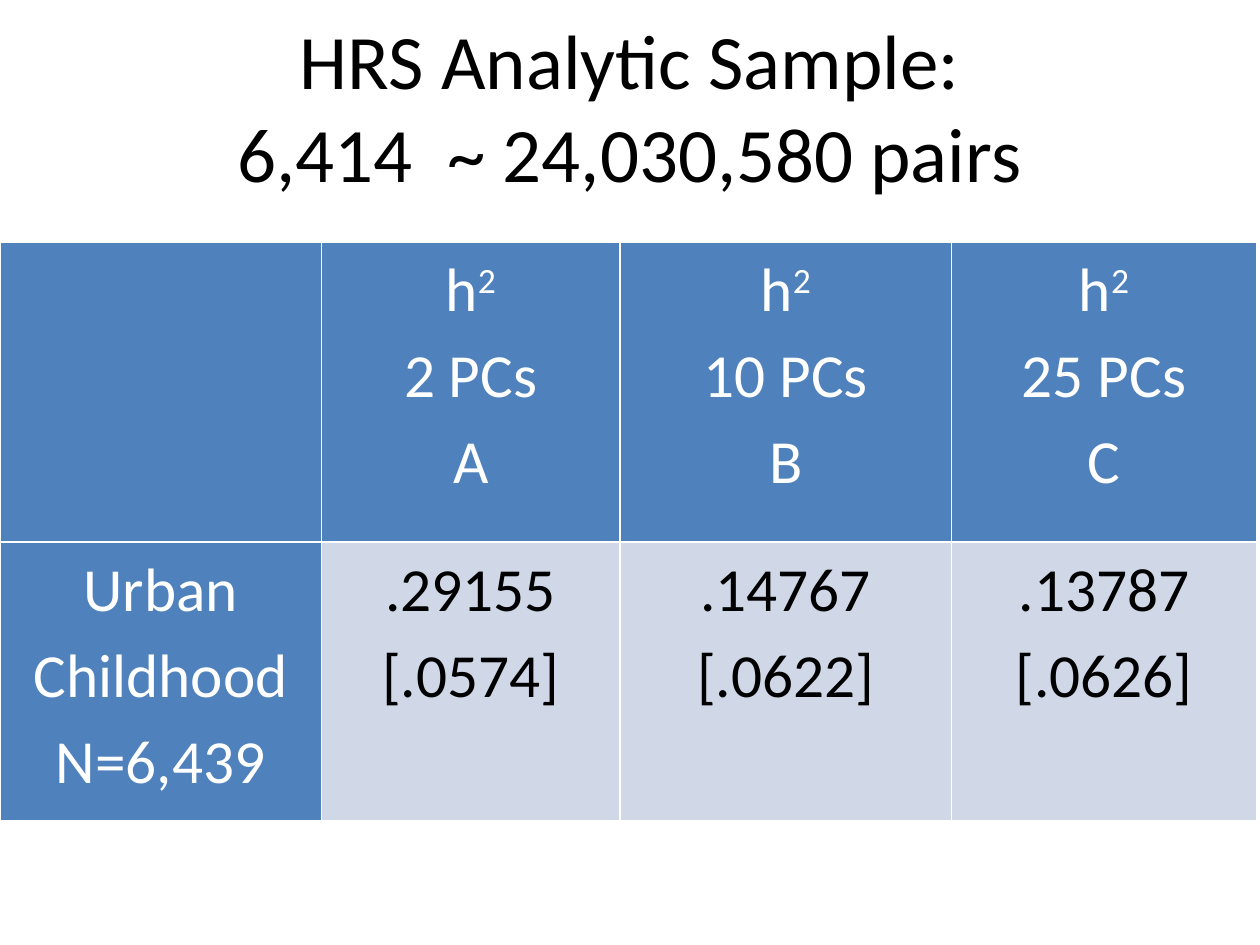
from dataclasses import dataclass

from lxml.etree import SubElement
from pptx import Presentation
from pptx.dml.color import RGBColor
from pptx.enum.text import MSO_ANCHOR as Anchor, PP_ALIGN as Align
from pptx.oxml.ns import qn
from pptx.util import Cm, Pt


@dataclass(frozen=True)
class Theme:
    font: str = "Calibri"
    title_size: int = 44
    cell_size: int = 35
    line_spacing: float = 1.15
    border_width: int = 1
    dark: str = "000000"
    light: str = "FFFFFF"
    header_fill: str = "4F81BD"
    body_fill: str = "D0D8E8"


THEME = Theme()

COLUMN_WIDTHS = (6.48, 6.02, 6.68, 6.15)
ROW_HEIGHTS = (6.05, 5.61)
# Each cell is a list of paragraphs; ^ starts a superscript
MODELS = (("2 PCs", "A"), ("10 PCs", "B"), ("25 PCs", "C"))
ROWS = (
    [[]] + [["h^2", components, letter] for components, letter in MODELS],
    [["Urban Childhood", "N=6,439"], [".29155 [.0574]"], [".14767 [.0622]"],
     [".13787", "[.0626]"]],
)


def write_text(paragraph, text, *, size, color, spacing=1.0):
    paragraph.alignment = Align.CENTER
    paragraph.line_spacing = spacing
    base, _, superscript = text.partition("^")
    for number, line in enumerate(base.split("\n")):
        if number:
            paragraph.add_line_break()
        paragraph.add_run().text = line
    if superscript:
        run = paragraph.add_run()
        run.text = superscript
        run._r.get_or_add_rPr().set("baseline", "30000")
    for run in paragraph.runs:
        run.font.name = THEME.font
        run.font.size = Pt(size)
        run.font.color.rgb = RGBColor.from_string(color)


def set_borders(cell):
    properties = cell._tc.get_or_add_tcPr()
    for position, side in enumerate(("lnL", "lnR", "lnT", "lnB")):
        line = SubElement(properties, qn(f"a:{side}"), w=str(Pt(THEME.border_width)))
        fill = SubElement(line, qn("a:solidFill"))
        SubElement(fill, qn("a:srgbClr"), val=THEME.light)
        # Borders come before the fill in a cell's properties
        properties.insert(position, line)


def add_title(slide, left, top, width, height):
    frame = slide.shapes.add_textbox(Cm(left), Cm(top), Cm(width), Cm(height)).text_frame
    frame.word_wrap = True
    frame.vertical_anchor = Anchor.MIDDLE
    write_text(frame.paragraphs[0], "HRS Analytic Sample:\n6,414  ~ 24,030,580 pairs",
               size=THEME.title_size, color=THEME.dark)


def fill_cell(cell, lines, is_header):
    cell.margin_left = cell.margin_right = Cm(0.23)
    cell.margin_top = cell.margin_bottom = 0
    cell.fill.solid()
    cell.fill.fore_color.rgb = RGBColor.from_string(
        THEME.header_fill if is_header else THEME.body_fill)
    set_borders(cell)
    frame = cell.text_frame
    for number, line in enumerate(lines):
        paragraph = frame.add_paragraph() if number else frame.paragraphs[0]
        write_text(paragraph, line, size=THEME.cell_size,
                   color=THEME.light if is_header else THEME.dark,
                   spacing=THEME.line_spacing)


def add_heritability_table(slide, left, top, width, height):
    table = slide.shapes.add_table(len(ROWS), len(COLUMN_WIDTHS), Cm(left), Cm(top),
                                   Cm(width), Cm(height)).table
    for column, share in zip(table.columns, COLUMN_WIDTHS):
        column.width = Cm(width * share / sum(COLUMN_WIDTHS))
    for row, share in zip(table.rows, ROW_HEIGHTS):
        row.height = Cm(height * share / sum(ROW_HEIGHTS))
    for row_number, row in enumerate(ROWS):
        for column_number, lines in enumerate(row):
            fill_cell(table.cell(row_number, column_number), lines,
                      is_header=row_number == 0 or column_number == 0)


def main():
    presentation = Presentation()
    presentation.slide_width, presentation.slide_height = Cm(25.4), Cm(19.05)
    slide = presentation.slides.add_slide(presentation.slide_layouts[6])
    add_title(slide, 0, 0, 25.4, 4.24)
    add_heritability_table(slide, 0, 4.88, sum(COLUMN_WIDTHS), sum(ROW_HEIGHTS))
    presentation.save("out.pptx")


if __name__ == "__main__":
    main()
